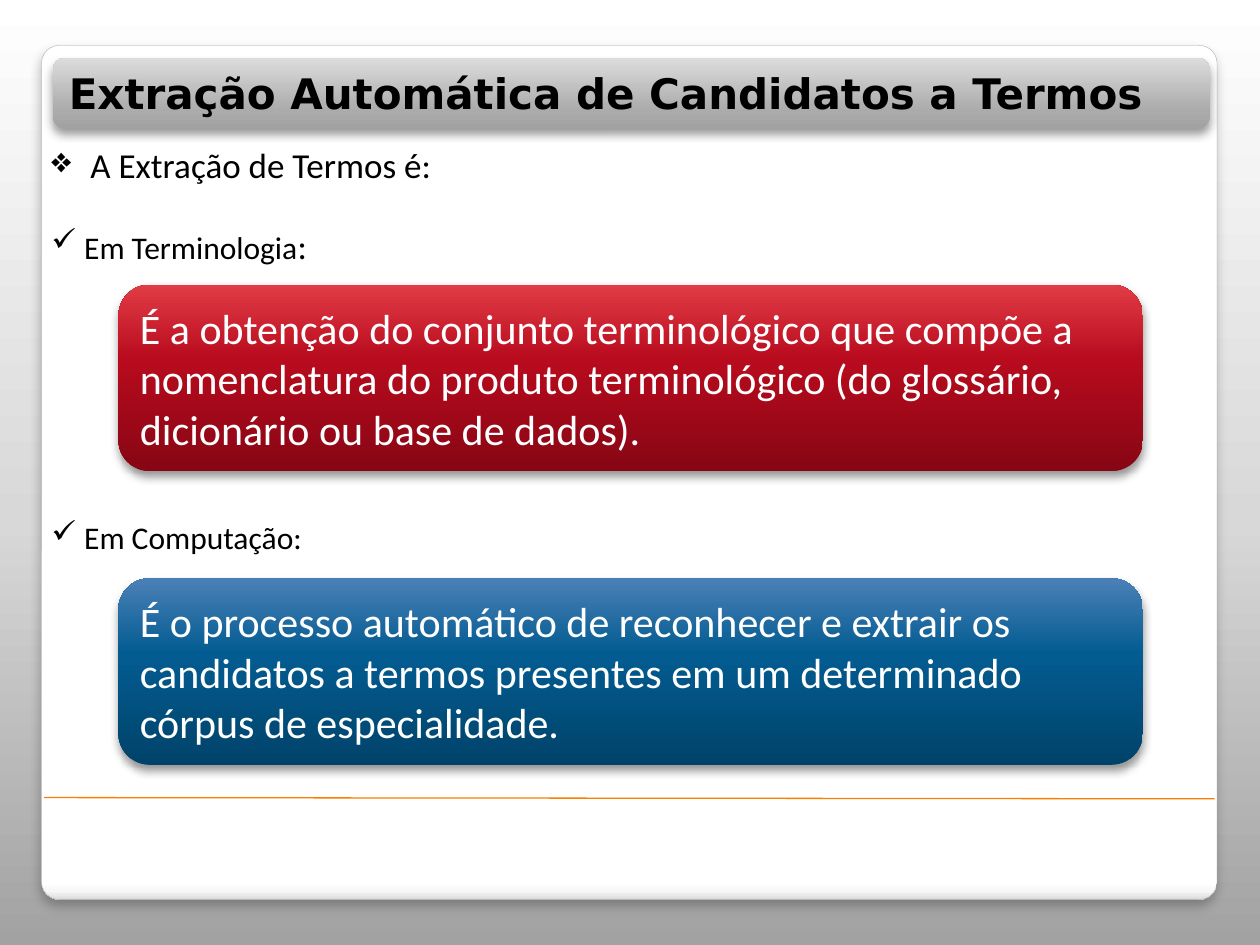
from lxml.etree import SubElement
from pptx import Presentation
from pptx.dml.color import RGBColor
from pptx.enum.shapes import MSO_CONNECTOR as Connector, MSO_SHAPE as Shape
from pptx.enum.text import MSO_ANCHOR as Anchor, MSO_AUTO_SIZE as AutoSize, PP_ALIGN as Align
from pptx.oxml.ns import qn
from pptx.util import Inches, Pt

COLORS = {
    "text": "000000",
    "light": "FFFFFF",
    "shadow": "000000",
    "frame": "A4A4A4",
    "rule": "F97F00",
}
GRADIENTS = {
    "background": [(0, "A2A2A2"), (45, "D8D8D8"), (100, "FFFFFF")],
    "panel": [(0, "FFFFFF"), (98, "FFFFFF"), (99, "F7F7F7"), (100, "DADADA")],
    "title": [(0, "A2A2A2"), (25, "ABABAB"), (100, "DCDCDC")],
    "red": [(0, "870614"), (60, "B80B1E"), (100, "E13C45")],
    "blue": [(0, "00436A"), (60, "035C91"), (100, "4A80B7")],
}
TITLE_FONT = {"name": "DejaVu Sans", "size": Pt(24), "bold": True}
BODY_FONT = {"name": "Calibri", "size": Pt(24)}


def add_color(parent, color, alpha=None):
    element = SubElement(parent, qn("a:srgbClr"), val=color)
    if alpha is not None:
        SubElement(element, qn("a:alpha"), val=str(alpha * 1000))


def set_gradient(fill, owner, name, angle=90):
    fill.gradient()
    fill.gradient_angle = angle
    stop_list = next(owner.iter(qn("a:gsLst")))
    for stop in list(stop_list):
        stop_list.remove(stop)
    for position, color in GRADIENTS[name]:
        stop = SubElement(stop_list, qn("a:gs"), pos=str(position * 1000))
        add_color(stop, color)


def set_shadow(shape, alpha=40, blur=5.2, distance=3):
    shape.shadow.inherit = False
    effects = shape._element.spPr.find(qn("a:effectLst"))
    shadow = SubElement(
        effects, qn("a:outerShdw"), blurRad=str(Pt(blur)), dist=str(Pt(distance)),
        dir="5400000", algn="ctr", rotWithShape="0",
    )
    add_color(shadow, COLORS["shadow"], alpha)


def add_run(paragraph, text, color, formats):
    run = paragraph.add_run()
    run.text = text
    run.font.color.rgb = RGBColor.from_string(COLORS[color])
    for name, value in formats.items():
        setattr(run.font, name, value)


def add_round_box(slide, box, gradient, text, color, formats):
    shape = slide.shapes.add_shape(Shape.ROUNDED_RECTANGLE, *map(Inches, box))
    set_gradient(shape.fill, shape._element, gradient)
    shape.line.fill.background()
    set_shadow(shape)
    frame = shape.text_frame
    frame.word_wrap = True
    frame.vertical_anchor = Anchor.MIDDLE
    paragraph = frame.paragraphs[0]
    paragraph.alignment = Align.LEFT
    add_run(paragraph, text, color, formats)


def add_bullet_line(slide, box, bullet, indent, runs):
    frame = slide.shapes.add_textbox(*map(Inches, box)).text_frame
    frame.word_wrap = True
    frame.auto_size = AutoSize.SHAPE_TO_FIT_TEXT
    paragraph = frame.paragraphs[0]
    properties = paragraph._p.get_or_add_pPr()
    properties.set("marL", str(Inches(indent)))
    properties.set("indent", str(-Inches(indent)))
    SubElement(properties, qn("a:buChar"), char=bullet)
    for text, size in runs:
        add_run(paragraph, text, "text", {**BODY_FONT, "size": Pt(size)})


def add_panel(slide, left, top, width, height):
    panel = slide.shapes.add_shape(
        Shape.ROUNDED_RECTANGLE, *map(Inches, (left, top, width, height))
    )
    panel.adjustments[0] = 0.021
    set_gradient(panel.fill, panel._element, "panel", 270)
    panel.line.color.rgb = RGBColor.from_string(COLORS["frame"])
    panel.line.width = Pt(0.16)
    set_shadow(panel, 25, 6, 4)

    rule_top = top + 5.97
    rule = slide.shapes.add_connector(
        Connector.STRAIGHT,
        *map(Inches, (left + 0.02, rule_top, left + width - 0.02, rule_top + 0.01)),
    )
    rule.line.color.rgb = RGBColor.from_string(COLORS["rule"])
    rule.line.width = Pt(0.75)
    SubElement(rule._element.spPr, qn("a:effectLst"))


def add_definition(slide, left, top, heading_height, gradient, heading, text):
    add_round_box(slide, (left + 0.63, top + 0.53, 8.13, 1.48), gradient, text, "light", BODY_FONT)
    add_bullet_line(slide, (left, top, 4.3, heading_height), "✓", 0.26, heading)


def main():
    presentation = Presentation()
    presentation.slide_width = Inches(10)
    presentation.slide_height = Inches(7.5)
    slide = presentation.slides.add_slide(presentation.slide_layouts[6])
    set_gradient(slide.background.fill, slide._element, "background")

    add_panel(slide, 0.33, 0.36, 9.33, 6.78)
    add_round_box(
        slide, (0.42, 0.46, 9.18, 0.56), "title",
        "Extração Automática de Candidatos a Termos", "text", TITLE_FONT,
    )
    add_bullet_line(slide, (0.31, 1.09, 4.3, 0.44), "❖", 0.31, [("A Extração de Termos é:", 20)])
    add_definition(
        slide, 0.31, 1.73, 0.44, "red", [("Em Terminologia", 18), (":", 20)],
        "É a obtenção do conjunto terminológico que compõe a nomenclatura do produto "
        "terminológico (do glossário, dicionário ou base de dados).",
    )
    add_definition(
        slide, 0.31, 4.06, 0.4, "blue", [("Em Computação:", 18)],
        "É o processo automático de reconhecer e extrair os candidatos a termos "
        "presentes em um determinado córpus de especialidade.",
    )
    presentation.save("out.pptx")


if __name__ == "__main__":
    main()
